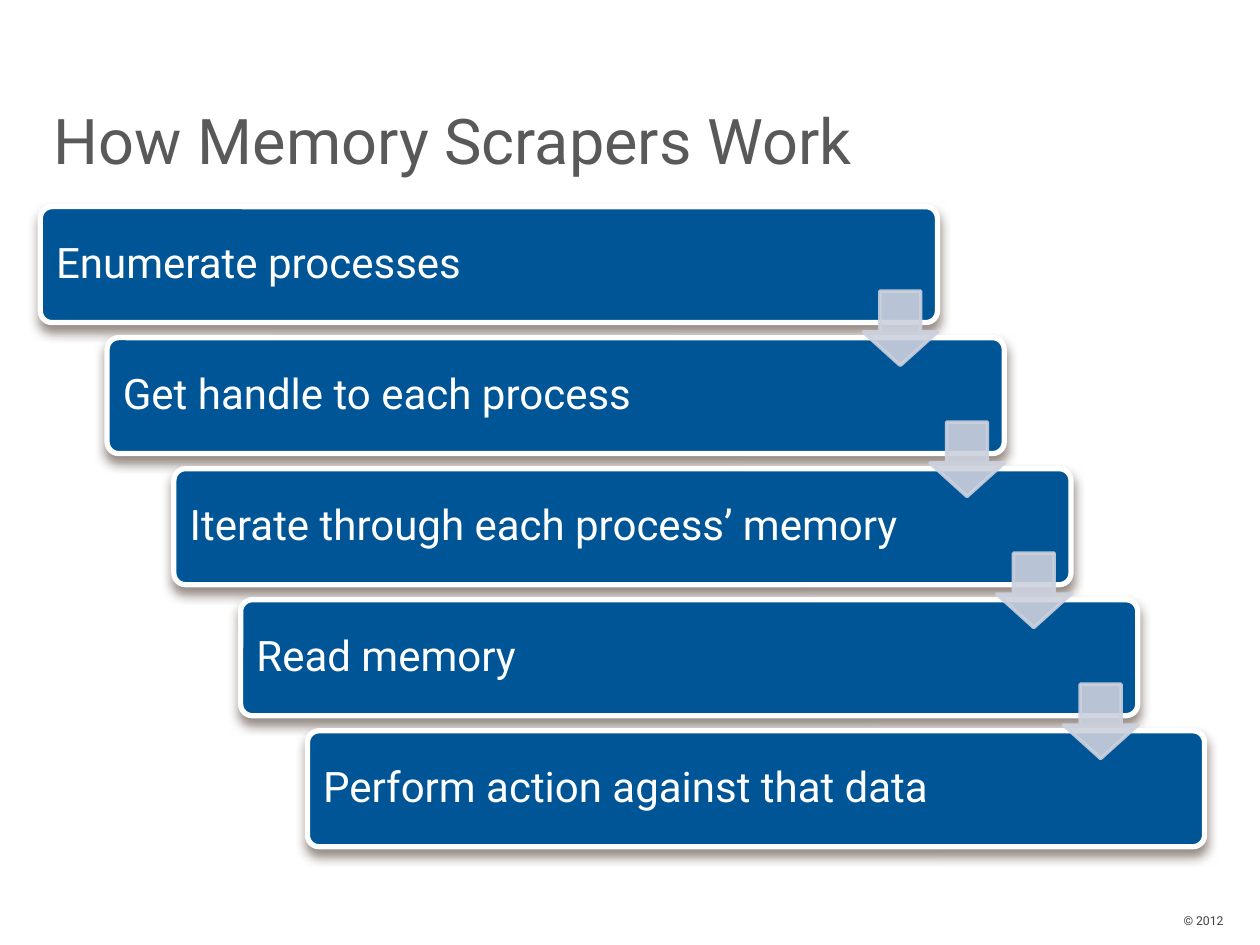
from dataclasses import dataclass

from lxml import etree
from pptx import Presentation
from pptx.dml.color import RGBColor
from pptx.enum.shapes import MSO_SHAPE
from pptx.enum.text import MSO_ANCHOR, PP_ALIGN
from pptx.oxml.ns import qn
from pptx.util import Inches, Pt

ROUNDED_BAR = MSO_SHAPE.ROUNDED_RECTANGLE
DOWN_ARROW = MSO_SHAPE.DOWN_ARROW
TOP, MIDDLE = MSO_ANCHOR.TOP, MSO_ANCHOR.MIDDLE
LEFT, RIGHT = PP_ALIGN.LEFT, PP_ALIGN.RIGHT


@dataclass(frozen=True)
class Theme:
    font: str = "Roboto"
    title_size: int = 36
    step_size: int = 24
    footer_size: int = 7
    title_color: str = "595959"
    footer_color: str = "404040"
    bar_color: str = "005596"
    light_color: str = "FFFFFF"
    arrow_color: str = "CCD1DD"
    shadow_color: str = "4E3B30"


@dataclass(frozen=True)
class Box:
    """A rectangle in inches."""
    left: float
    top: float
    width: float
    height: float

    def emu(self) -> tuple:
        return tuple(Inches(n) for n in (self.left, self.top, self.width, self.height))


@dataclass(frozen=True)
class Label:
    text: str
    size: int
    color: str
    align: int = LEFT
    anchor: int = MIDDLE
    inset_x: float = 0.1
    inset_y: float = 0.05
    line_spacing: float = 1.0


THEME = Theme()
SLIDE_WIDTH, SLIDE_HEIGHT = 10, 7.5
FIRST_BAR = Box(0.32, 1.64, 7.12, 0.92)
COLUMN_STEP, ROW_STEP = 0.53, 1.04
ARROW_SIZE, ARROW_DROP = 0.59, 0.67
STEPS = (
    "Enumerate processes",
    "Get handle to each process",
    "Iterate through each process’ memory",
    "Read memory",
    "Perform action against that data",
)


def bar_box(index: int) -> Box:
    """Place a bar one column and one row further for each step."""
    return Box(FIRST_BAR.left + index * COLUMN_STEP, FIRST_BAR.top + index * ROW_STEP,
               FIRST_BAR.width, FIRST_BAR.height)


def write_label(shape, label: Label) -> None:
    frame = shape.text_frame
    frame.word_wrap = True
    frame.vertical_anchor = label.anchor
    frame.margin_left = frame.margin_right = Inches(label.inset_x)
    frame.margin_top = frame.margin_bottom = Inches(label.inset_y)
    paragraph = frame.paragraphs[0]
    paragraph.text = label.text
    paragraph.alignment = label.align
    paragraph.line_spacing = label.line_spacing
    paragraph.font.name = THEME.font
    paragraph.font.size = Pt(label.size)
    paragraph.font.color.rgb = RGBColor.from_string(label.color)


def add_text(slide, box: Box, label: Label) -> None:
    write_label(slide.shapes.add_textbox(*box.emu()), label)


def add_preset(slide, preset, box: Box, fill: str, line: str, line_width: float,
               adjustments: tuple):
    shape = slide.shapes.add_shape(preset, *box.emu())
    shape.shadow.inherit = False
    shape.fill.solid()
    shape.fill.fore_color.rgb = RGBColor.from_string(fill)
    shape.line.color.rgb = RGBColor.from_string(line)
    shape.line.width = Pt(line_width)
    for index, value in enumerate(adjustments):
        shape.adjustments[index] = value
    return shape


def set_alpha(color, percent: int) -> None:
    etree.SubElement(color, qn("a:alpha"), val=str(percent * 1000))


def add_drop_shadow(shape) -> None:
    effects = shape._element.spPr.find(qn("a:effectLst"))
    shadow = etree.SubElement(effects, qn("a:outerShdw"), blurRad=str(Pt(6)),
                              dist=str(Pt(4)), dir=str(90 * 60000), rotWithShape="0")
    color = etree.SubElement(shadow, qn("a:srgbClr"), val=THEME.shadow_color)
    set_alpha(color, 60)


def add_bar(slide, box: Box, text: str) -> None:
    bar = add_preset(slide, ROUNDED_BAR, box, THEME.bar_color, THEME.light_color, 3, (0.1,))
    add_drop_shadow(bar)
    write_label(bar, Label(text, THEME.step_size, THEME.light_color,
                           inset_y=0.1, line_spacing=0.9))


def add_arrow(slide, bar: Box) -> None:
    """Hang an arrow from the right end of a bar down into the next one."""
    box = Box(bar.left + bar.width - ARROW_SIZE, bar.top + ARROW_DROP, ARROW_SIZE, ARROW_SIZE)
    arrow = add_preset(slide, DOWN_ARROW, box, THEME.arrow_color, THEME.arrow_color, 2,
                       (0.55, 0.45))
    for color in arrow._element.spPr.iter(qn("a:srgbClr")):
        set_alpha(color, 90)


def main() -> None:
    presentation = Presentation()
    presentation.slide_width = Inches(SLIDE_WIDTH)
    presentation.slide_height = Inches(SLIDE_HEIGHT)
    slide = presentation.slides.add_slide(presentation.slide_layouts[6])

    add_text(slide, Box(8.62, 7.21, 1.17, 0.2),
             Label("© 2012", THEME.footer_size, THEME.footer_color, RIGHT, TOP, 0.08, 0.04))
    add_text(slide, Box(0.33, 0.48, 9.25, 1.25),
             Label("How Memory Scrapers Work", THEME.title_size, THEME.title_color))

    bars = [bar_box(index) for index in range(len(STEPS))]
    for box, text in zip(bars, STEPS):
        add_bar(slide, box, text)
    for box in bars[:-1]:
        add_arrow(slide, box)

    presentation.save("out.pptx")


if __name__ == "__main__":
    main()
